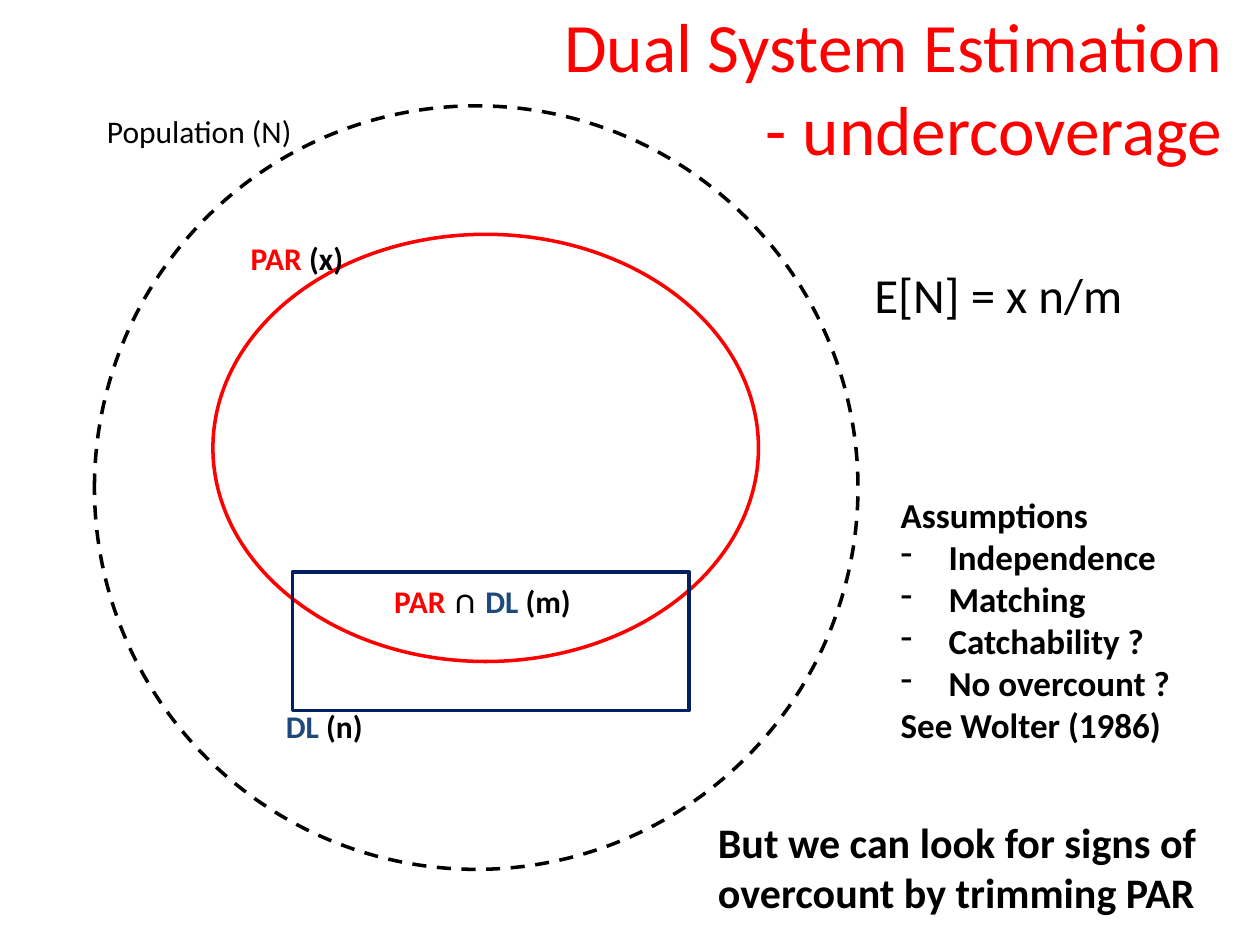
"""Build a slide on dual system estimation with overlapping sets."""
from typing import NamedTuple

from lxml import etree
from pptx import Presentation
from pptx.dml.color import RGBColor
from pptx.enum.dml import MSO_LINE
from pptx.enum.shapes import MSO_SHAPE
from pptx.enum.text import MSO_ANCHOR, MSO_AUTO_SIZE, PP_ALIGN
from pptx.oxml.ns import qn
from pptx.util import Inches, Pt

OVAL, RECT = MSO_SHAPE.OVAL, MSO_SHAPE.RECTANGLE
DASH, SOLID = MSO_LINE.DASH, MSO_LINE.SOLID
RIGHT, MIDDLE = PP_ALIGN.RIGHT, MSO_ANCHOR.MIDDLE
FIXED, GROW = MSO_AUTO_SIZE.NONE, MSO_AUTO_SIZE.SHAPE_TO_FIT_TEXT
FONT = "Calibri"
INDENT = 0.38
COLORS = {"black": "000000", "red": "FF0000", "navy": "002060", "blue": "1F497D"}


class Box(NamedTuple):
    left: float
    top: float
    width: float
    height: float


class Area(NamedTuple):
    kind: int
    box: Box
    color: str
    dash: int = SOLID


class Word(NamedTuple):
    text: str
    color: str = "black"
    size: float = 18
    bold: bool = True


class Line(NamedTuple):
    words: list[Word]
    bullet: bool = False


class Label(NamedTuple):
    box: Box
    lines: list[Line]


PAR, DL = Word("PAR ", "red"), Word("DL ", "blue")
ITEMS = ["Independence", "Matching", "Catchability ?", "No overcount ?"]

AREAS = [
    Area(OVAL, Box(0.75, 0.84, 6.06, 6.06), "black", DASH),
    Area(OVAL, Box(1.69, 1.86, 4.33, 3.39), "red"),
    Area(RECT, Box(2.32, 4.54, 3.15, 1.1), "navy"),
]

LABELS = [
    Label(Box(0.75, 0.84, 2.28, 0.4), [Line([Word("Population (N)", bold=False)])]),
    Label(Box(1.89, 1.85, 2.28, 0.4), [Line([PAR, Word("(x)")])]),
    Label(Box(2.17, 5.56, 2.28, 0.4), [Line([DL, Word("(n)")])]),
    Label(Box(3.03, 4.54, 1.65, 0.44),
          [Line([PAR, Word("∩ ", size=20), DL, Word("(m)")])]),
    Label(Box(5.6, 6.43, 5, 0.91),
          [Line([Word("But we can look for signs of overcount by trimming PAR", size=24)])]),
    Label(Box(6.84, 2.05, 2.52, 0.57),
          [Line([Word("E[N] = x n/m", size=28, bold=False)])]),
    Label(Box(7.05, 3.87, 2.76, 2.12), [
        Line([Word("Assumptions", size=20)]),
        *(Line([Word(item, size=20)], bullet=True) for item in ITEMS),
        Line([Word("See Wolter (1986)", size=20)]),
    ]),
]


def paint(font, word: Word) -> None:
    font.name, font.size, font.bold = FONT, Pt(word.size), word.bold
    font.color.rgb = RGBColor.from_string(COLORS[word.color])


def add_bullet(para) -> None:
    props = para._p.get_or_add_pPr()
    props.set("marL", str(Inches(INDENT)))
    props.set("indent", str(-Inches(INDENT)))
    etree.SubElement(props, qn("a:buFontTx"))
    etree.SubElement(props, qn("a:buChar")).set("char", "-")


def draw_area(slide, area: Area) -> None:
    shape = slide.shapes.add_shape(area.kind, *map(Inches, area.box))
    shape.shadow.inherit = False
    shape.fill.background()
    shape.line.color.rgb = RGBColor.from_string(COLORS[area.color])
    shape.line.width = Pt(2)
    shape.line.dash_style = area.dash


def draw_label(slide, label: Label) -> None:
    frame = slide.shapes.add_textbox(*map(Inches, label.box)).text_frame
    frame.word_wrap = True
    frame.auto_size = GROW
    for index, line in enumerate(label.lines):
        para = frame.add_paragraph() if index else frame.paragraphs[0]
        if line.bullet:
            add_bullet(para)
        for word in line.words:
            run = para.add_run()
            run.text = word.text
            paint(run.font, word)


def draw_title(slide, box: Box, word: Word) -> None:
    title = slide.shapes.title
    title.left, title.top, title.width, title.height = map(Inches, box)
    frame = title.text_frame
    frame.text = word.text.replace("\n", "\v")
    frame.auto_size = FIXED
    frame.vertical_anchor = MIDDLE
    para = frame.paragraphs[0]
    para.alignment = RIGHT
    for run in para.runs:
        paint(run.font, word)


def main() -> None:
    deck = Presentation()
    deck.slide_width, deck.slide_height = Inches(10), Inches(7.5)
    slide = deck.slides.add_slide(deck.slide_layouts[5])
    for area in AREAS:
        draw_area(slide, area)
    for label in LABELS:
        draw_label(slide, label)
    draw_title(slide, Box(2.85, 0.06, 6.95, 1.25),
               Word("Dual System Estimation\n- undercoverage", "red", 39.6, False))
    deck.save("out.pptx")


if __name__ == "__main__":
    main()
